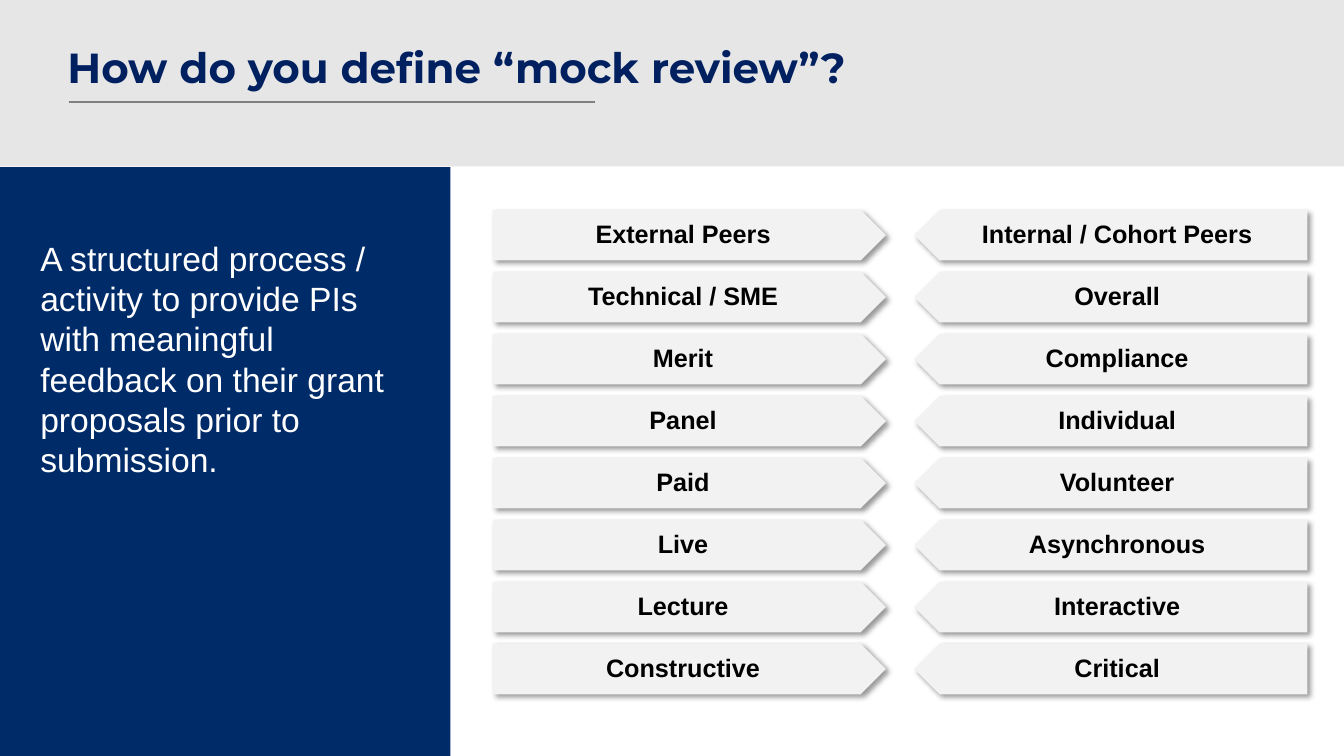
from lxml.etree import SubElement
from pptx import Presentation
from pptx.dml.color import RGBColor
from pptx.enum.shapes import MSO_CONNECTOR as Connector, MSO_SHAPE as Shape
from pptx.enum.text import MSO_ANCHOR as Anchor, PP_ALIGN as Align
from pptx.oxml.ns import qn
from pptx.util import Inches, Pt

COLORS = {
    "header": "E6E6E6",
    "rule": "808080",
    "title": "002060",
    "panel": "002B69",
    "tag": "F2F2F2",
    "black": "000000",
    "white": "FFFFFF",
}
SLIDE_WIDTH, SLIDE_HEIGHT = Inches(13.33), Inches(7.5)

# Text formats: frame, paragraph and font values; insets run left, top, right, bottom in points
TITLE_TEXT = {
    "insets": (7.2, 3.6, 7.2, 3.6),
    "frame": {"word_wrap": True, "vertical_anchor": Anchor.MIDDLE},
    "paragraph": {"line_spacing": 0.9, "alignment": Align.LEFT},
    "font": {"name": "Montserrat", "size": Pt(30), "bold": True},
    "color": "title",
}
PANEL_TEXT = {
    "insets": (28.8, 50.4, 43.2, 3.6),
    "frame": {"word_wrap": True, "vertical_anchor": Anchor.TOP},
    "paragraph": {"alignment": Align.LEFT},
    "font": {"name": "Arial", "size": Pt(24)},
    "color": "white",
}
TAG_TEXT = {
    "insets": (7.2, 7.2, 7.2, 7.2),
    "frame": {"word_wrap": True, "vertical_anchor": Anchor.MIDDLE},
    "paragraph": {"line_spacing": 0.9, "alignment": Align.CENTER},
    "font": {"name": "Arial", "size": Pt(18), "bold": True},
    "color": "black",
}

# Tag grid, in percent of the slide's size
TAG_WIDTH, TAG_HEIGHT = 29.25, 6.7
FIRST_ROW, ROW_PITCH = 27.75, 8.2
LEFT_COLUMN, RIGHT_COLUMN = 36.67, 68.03

OPPOSITES = [
    ("External Peers", "Internal / Cohort Peers"),
    ("Technical / SME", "Overall"),
    ("Merit", "Compliance"),
    ("Panel", "Individual"),
    ("Paid", "Volunteer"),
    ("Live", "Asynchronous"),
    ("Lecture", "Interactive"),
    ("Constructive", "Critical"),
]


def rgb(color):
    return RGBColor.from_string(COLORS[color])


def area(left, top, width, height):
    """Turn percentages of the slide into lengths."""
    return (int(SLIDE_WIDTH * left / 100), int(SLIDE_HEIGHT * top / 100),
            int(SLIDE_WIDTH * width / 100), int(SLIDE_HEIGHT * height / 100))


def set_values(target, values):
    for key, value in values.items():
        setattr(target, key, value)


def write(holder, wording, style):
    frame = holder.text_frame
    set_values(frame, style["frame"])
    for side, inset in zip(("left", "top", "right", "bottom"), style["insets"]):
        setattr(frame, f"margin_{side}", Pt(inset))
    paragraph = frame.paragraphs[0]
    set_values(paragraph, style["paragraph"])
    run = paragraph.add_run()
    run.text = wording
    set_values(run.font, style["font"])
    run.font.color.rgb = rgb(style["color"])


def add_block(shapes, kind, place, color):
    block = shapes.add_shape(kind, *area(*place))
    block.shadow.inherit = False
    block.fill.solid()
    block.fill.fore_color.rgb = rgb(color)
    block.line.fill.background()
    return block


def add_rule(shapes, left, right, top):
    x1, y, x2, _ = area(left, top, right, 0)
    rule = shapes.add_connector(Connector.STRAIGHT, x1, y, x2, y)
    rule.line.color.rgb = rgb("rule")
    rule.line.width = Pt(1.5)
    SubElement(rule._element.spPr, qn("a:effectLst"))


def cast_shadow(block):
    effects = block._element.spPr.find(qn("a:effectLst"))
    shadow = SubElement(effects, qn("a:outerShdw"), blurRad=str(Pt(4)),
                        dist=str(Pt(3)), dir="2700000", algn="tl", rotWithShape="0")
    shade = SubElement(shadow, qn("a:srgbClr"), val=COLORS["black"])
    SubElement(shade, qn("a:alpha"), val="40000")


def add_tag_column(shapes, left, labels, points_left=False):
    column = shapes.add_group_shape()
    for row, label in enumerate(labels):
        place = (left, FIRST_ROW + row * ROW_PITCH, TAG_WIDTH, TAG_HEIGHT)
        tag = add_block(column.shapes, Shape.PENTAGON, place, "tag")
        tag.adjustments[0] = 0.5
        if points_left:
            tag._element.spPr.xfrm.set("flipH", "1")
        cast_shadow(tag)
        write(tag, label, TAG_TEXT)


def main():
    deck = Presentation()
    deck.slide_width, deck.slide_height = SLIDE_WIDTH, SLIDE_HEIGHT
    shapes = deck.slides.add_slide(deck.slide_layouts[6]).shapes

    # Header band
    add_block(shapes, Shape.RECTANGLE, (0, 0, 100, 22), "header")
    add_rule(shapes, 5.1, 44.25, 13.47)
    title = shapes.add_textbox(*area(4.28, 4, 87.83, 10.53))
    write(title, "How do you define “mock review”?", TITLE_TEXT)

    # Definition and pairs of opposites
    external, internal = zip(*OPPOSITES)
    add_tag_column(shapes, LEFT_COLUMN, external)
    definition = add_block(shapes, Shape.RECTANGLE, (0, 22.1, 33.52, 77.9), "panel")
    write(definition, "A structured process / activity to provide PIs with meaningful "
          "feedback on their grant proposals prior to submission.", PANEL_TEXT)
    add_tag_column(shapes, RIGHT_COLUMN, internal, points_left=True)

    deck.save("out.pptx")


if __name__ == "__main__":
    main()
